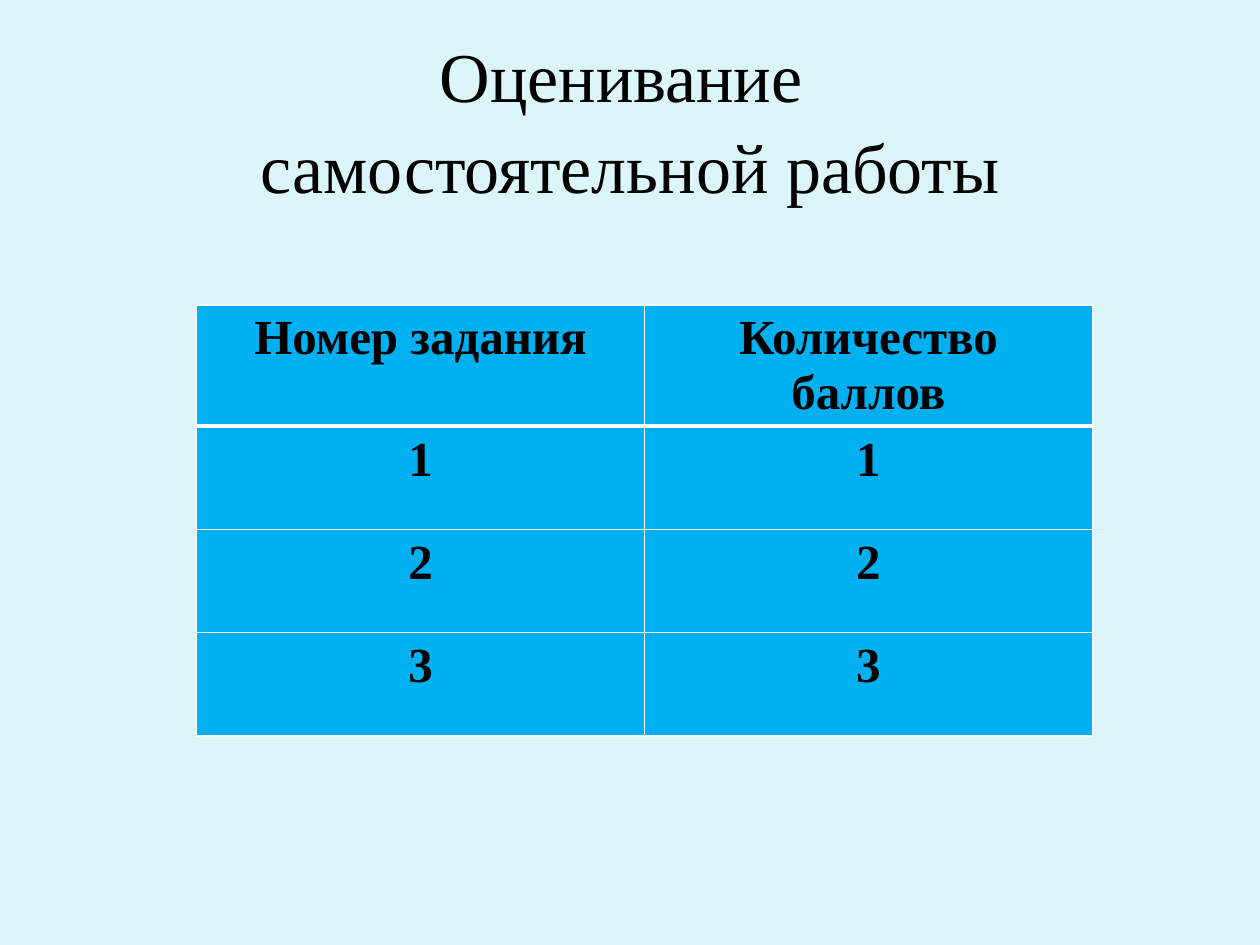
from dataclasses import dataclass

from lxml import etree
from pptx import Presentation
from pptx.dml.color import RGBColor
from pptx.enum.text import MSO_ANCHOR, PP_ALIGN
from pptx.oxml.ns import qn
from pptx.util import Inches, Pt

CENTER = PP_ALIGN.CENTER
MIDDLE = MSO_ANCHOR.MIDDLE

FONT = "Times New Roman"
BACKGROUND = "DBF5F9"
CELL_FILL = "00B0F0"
BLACK = "000000"
WHITE = "FFFFFF"
TITLE_ONLY_LAYOUT = 5
COLUMN_WIDTH = 3.555
ROW_HEIGHT = 0.82


@dataclass
class ScoreRow:
    task: str
    points: str
    top_border: float = 1
    bottom_border: float = 1


SCORE_ROWS = [
    ScoreRow("Номер задания", "Количество баллов", bottom_border=3),
    ScoreRow("1", "1", top_border=3),
    ScoreRow("2", "2"),
    ScoreRow("3", "3"),
]


def color(value: str) -> RGBColor:
    return RGBColor.from_string(value)


def format_paragraph(paragraph, size: float, bold: bool = False) -> None:
    paragraph.alignment = CENTER
    paragraph.font.name = FONT
    paragraph.font.size = Pt(size)
    paragraph.font.bold = bold
    paragraph.font.color.rgb = color(BLACK)


def add_borders(cell, top: float, bottom: float) -> None:
    """Put the border lines before the cell fill, as the schema requires."""
    properties = cell._tc.get_or_add_tcPr()
    widths = {"a:lnL": 1, "a:lnR": 1, "a:lnT": top, "a:lnB": bottom}
    for position, (tag, width) in enumerate(widths.items()):
        line = etree.Element(qn(tag), w=str(Pt(width)))
        fill = etree.SubElement(line, qn("a:solidFill"))
        etree.SubElement(fill, qn("a:srgbClr"), val=WHITE)
        properties.insert(position, line)


def add_title(slide, text: str) -> None:
    title = slide.shapes.title
    title.left, title.top = Inches(0.5), Inches(0.3)
    title.width, title.height = Inches(9), Inches(1.25)
    title.text_frame.vertical_anchor = MIDDLE
    title.text_frame.text = text
    paragraph = title.text_frame.paragraphs[0]
    paragraph.line_spacing = 1.08
    format_paragraph(paragraph, 40)


def add_score_table(slide, rows: list[ScoreRow]) -> None:
    table = slide.shapes.add_table(
        len(rows), 2, Inches(1.56), Inches(2.42),
        Inches(2 * COLUMN_WIDTH), Inches(len(rows) * ROW_HEIGHT),
    ).table
    for column in table.columns:
        column.width = Inches(COLUMN_WIDTH)
    for table_row, score in zip(table.rows, rows):
        table_row.height = Inches(ROW_HEIGHT)
        for cell, text in zip(table_row.cells, (score.task, score.points)):
            cell.text = text
            cell.fill.solid()
            cell.fill.fore_color.rgb = color(CELL_FILL)
            add_borders(cell, score.top_border, score.bottom_border)
            format_paragraph(cell.text_frame.paragraphs[0], 28, bold=True)


def main() -> None:
    presentation = Presentation()
    presentation.slide_width = Inches(10)
    presentation.slide_height = Inches(7.5)
    slide = presentation.slides.add_slide(
        presentation.slide_layouts[TITLE_ONLY_LAYOUT])

    # Background
    slide.background.fill.solid()
    slide.background.fill.fore_color.rgb = color(BACKGROUND)

    # Title and table of points
    add_title(slide, "Оценивание \vсамостоятельной работы")
    add_score_table(slide, SCORE_ROWS)

    presentation.save("out.pptx")


if __name__ == "__main__":
    main()
